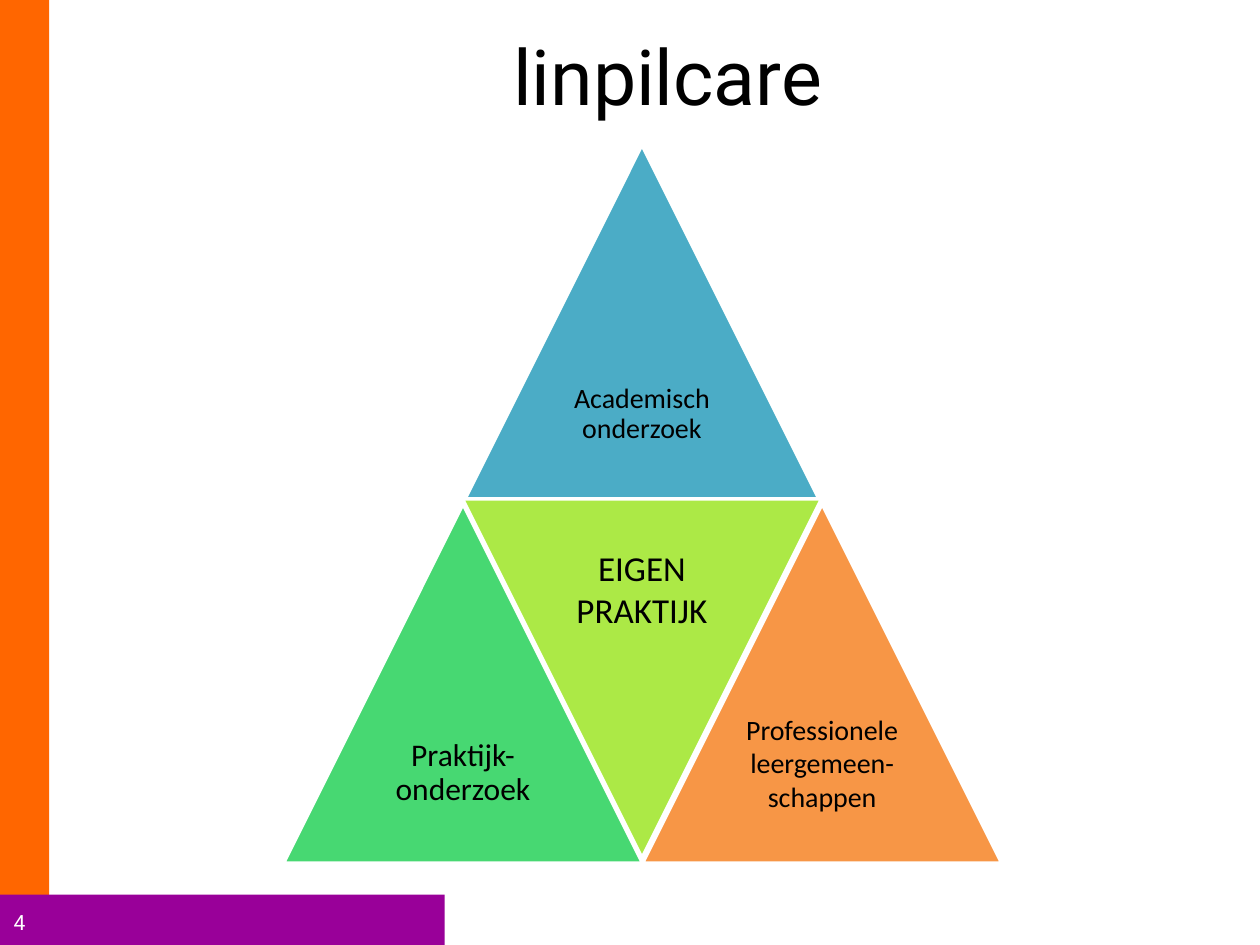
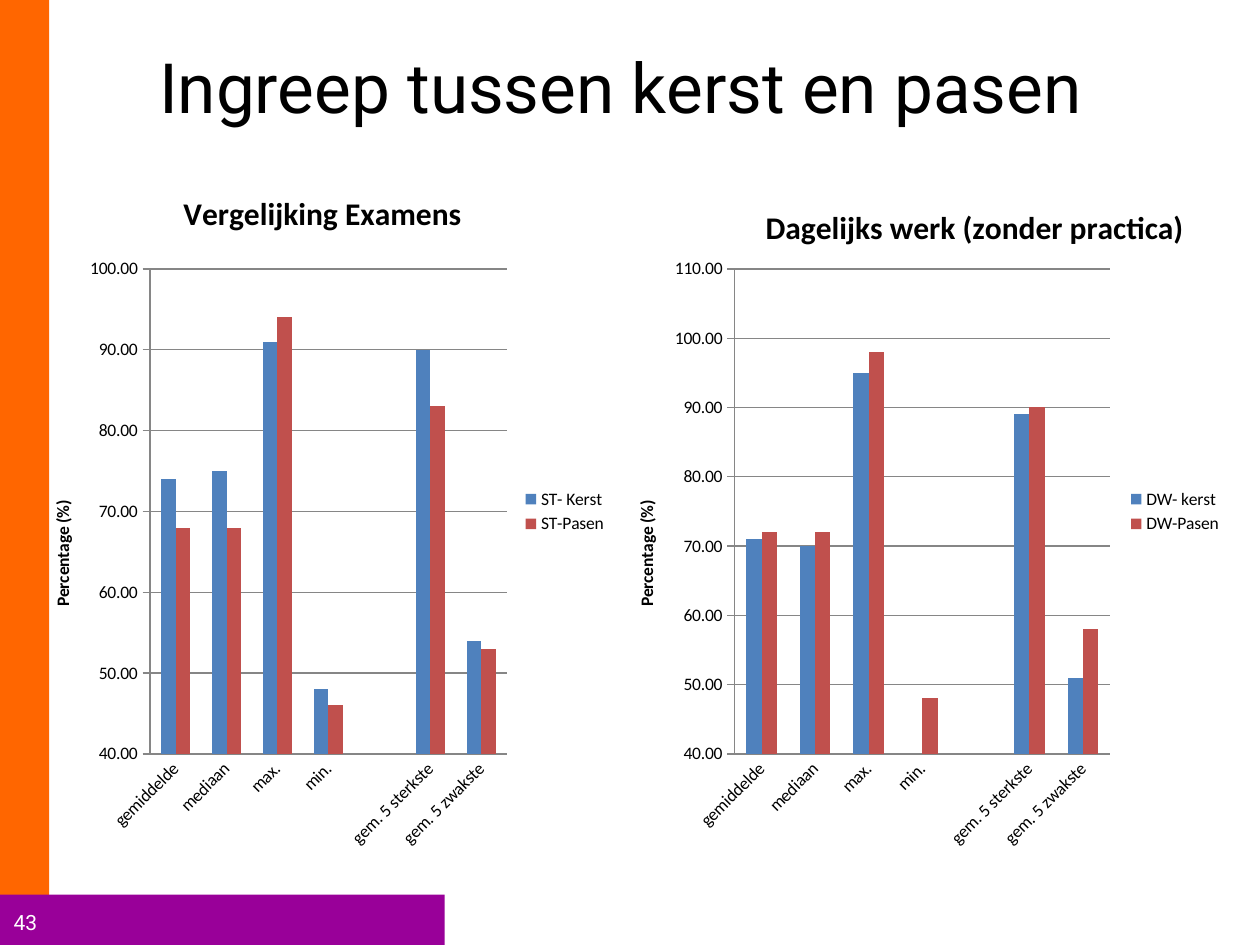
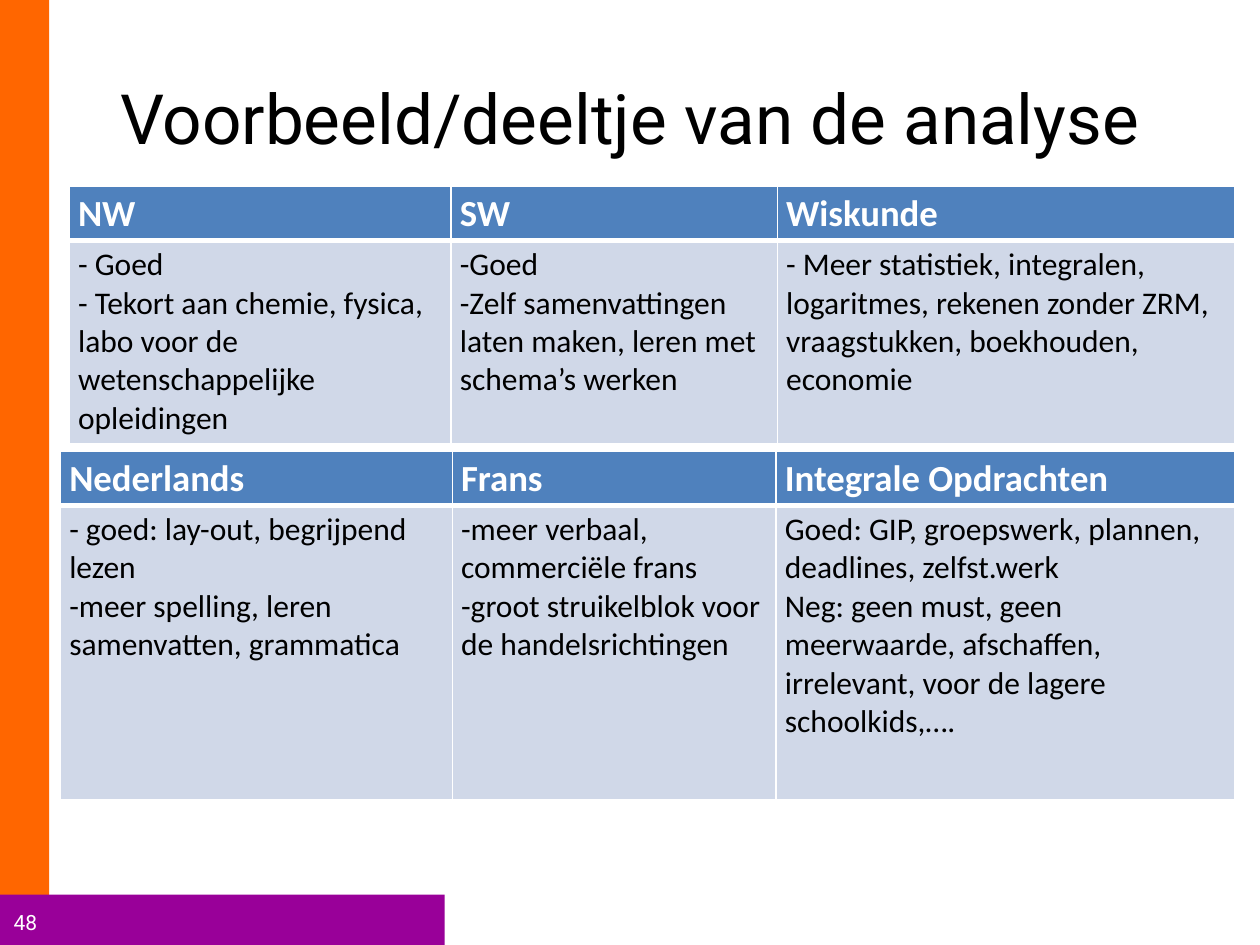
from lxml.etree import SubElement
from pptx import Presentation
from pptx.chart.data import CategoryChartData
from pptx.dml.color import RGBColor
from pptx.enum.chart import XL_CHART_TYPE as CHART, XL_LEGEND_POSITION as LEGEND, XL_TICK_MARK as TICK
from pptx.enum.shapes import MSO_SHAPE as SHAPE
from pptx.enum.text import MSO_ANCHOR as ANCHOR, PP_ALIGN as ALIGN
from pptx.oxml import parse_xml
from pptx.oxml.ns import nsdecls, qn
from pptx.util import Inches, Pt

ORANGE, PURPLE, WHITE, BLACK = "FF6600", "990099", "FFFFFF", "000000"
BLUE, RED, PALE, GREY = "4F81BD", "C0504D", "D0D8E8", "868686"
HEAD_FONT, BODY_FONT = "Roboto", "Calibri"


def rgb(value):
    """Turn a hex string into a colour."""
    return RGBColor.from_string(value)


def box(*lengths):
    """Turn left, top, width and height into lengths."""
    return [Inches(n) for n in lengths]


def style(font, size, color=BLACK, name=BODY_FONT, bold=False):
    """Format a font."""
    font.name, font.size, font.bold = name, Pt(size), bold
    font.color.rgb = rgb(color)


def place(parent, index, inner=False, **values):
    """Give a chart part a manual layout."""
    for old in parent.findall(qn("c:layout")):
        parent.remove(old)
    layout = parse_xml(f"<c:layout {nsdecls('c')}><c:manualLayout/></c:layout>")
    manual = layout[0]
    if inner:
        SubElement(manual, qn("c:layoutTarget")).set("val", "inner")
    for mode in ("xMode", "yMode"):
        SubElement(manual, qn(f"c:{mode}")).set("val", "edge")
    for key, value in values.items():
        SubElement(manual, qn(f"c:{key}")).set("val", str(value))
    parent.insert(index, layout)


def cell_borders(cell, top, bottom):
    """Draw white lines around a cell."""
    tcPr = cell._tc.get_or_add_tcPr()
    for side, width in (("L", 1), ("R", 1), ("T", top), ("B", bottom)):
        ln = SubElement(tcPr, qn(f"a:ln{side}"), w=str(Pt(width)))
        fill = SubElement(ln, qn("a:solidFill"))
        SubElement(fill, qn("a:srgbClr"), val=WHITE)


class Deck:
    """Hold the style and the current slide."""

    def __init__(self):
        """Start an empty presentation."""
        self.prs = Presentation()
        self.prs.slide_width, self.prs.slide_height = Inches(10), Inches(7.5)

    def new_slide(self, title, number, at, size=39.6):
        """Add a slide with its title, bands and number."""
        self.slide = self.prs.slides.add_slide(self.prs.slide_layouts[5])
        sp = self.slide.shapes.title
        sp.left, sp.top, sp.width, sp.height = box(*at)
        self.fill_text(sp.text_frame, title, size, name=HEAD_FONT, align=ALIGN.CENTER)
        self.shape(SHAPE.RECTANGLE, (0, 0, 0.39, 7.11), ORANGE)
        self.shape(SHAPE.RECTANGLE, (-0.01, 7.1, 3.54, 0.41), PURPLE)
        self.text(number, (0.01, 7.1, 0.69, 0.43), 12, color=WHITE, name=HEAD_FONT)

    def fill_text(self, tf, text, size, color=BLACK, name=BODY_FONT, bold=False,
                  align=ALIGN.LEFT, spacing=1.0):
        """Fill a text frame, one paragraph per line."""
        tf.word_wrap, tf.vertical_anchor = True, ANCHOR.MIDDLE
        for i, line in enumerate(text.split("\n")):
            p = tf.add_paragraph() if i else tf.paragraphs[0]
            p.alignment, p.line_spacing = align, spacing
            r = p.add_run()
            r.text = line
            style(r.font, size, color, name, bold)

    def text(self, text, at, size, inset=None, lift=0, **look):
        """Add a text box; lift raises its text from the bottom."""
        tf = self.slide.shapes.add_textbox(*box(*at)).text_frame
        if inset is not None:
            tf.margin_left = tf.margin_right = tf.margin_top = Inches(inset)
            tf.margin_bottom = Inches(inset + lift)
        self.fill_text(tf, text, size, **look)

    def shape(self, kind, at, fill, line=None):
        """Add a filled shape."""
        sp = self.slide.shapes.add_shape(kind, *box(*at))
        sp.shadow.inherit = False
        sp.fill.solid()
        sp.fill.fore_color.rgb = rgb(fill)
        if line:
            sp.line.color.rgb, sp.line.width = rgb(line), Pt(2)
        else:
            sp.line.fill.background()
        return sp

    def triangle(self, text, left, top, fill, size, down=False, spacing=1.0, lift=0):
        """Add a triangle with text in its wide half."""
        side = 2.85
        sp = self.shape(SHAPE.ISOSCELES_TRIANGLE, (left, top, side, side), fill, WHITE)
        sp.rotation = 180 if down else 0
        half = side / 2
        text_top = top if down else top + half
        self.text(text, (left + half / 2, text_top, half, half), size, inset=0.07,
                  lift=lift, align=ALIGN.CENTER, spacing=spacing)

    def chart(self, title, at, categories, series, top_value, plot_left, title_at=None):
        """Add a clustered column chart."""
        data = CategoryChartData()
        data.categories = categories
        for name, values in series.items():
            data.add_series(name, values)
        chart = self.slide.shapes.add_chart(CHART.COLUMN_CLUSTERED, *box(*at), data).chart
        style(chart.font, 10)
        self.chart_text(chart.chart_title, title, 18)
        if title_at:
            place(chart.chart_title.element, 1, x=title_at[0], y=title_at[1])
        chart.has_legend = True
        chart.legend.position, chart.legend.include_in_layout = LEGEND.RIGHT, False
        plot = chart.plots[0]
        plot.gap_width, plot.overlap, plot.vary_by_categories = 150, 0, False
        for ser, color in zip(plot.series, (BLUE, RED)):
            ser.format.fill.solid()
            ser.format.fill.fore_color.rgb = rgb(color)
            ser.invert_if_negative = False
        cat, val = chart.category_axis, chart.value_axis
        cat.major_tick_mark, val.major_tick_mark = TICK.NONE, TICK.OUTSIDE
        style(cat.tick_labels.font, 10)
        axis = cat.format.line and chart.element.find(".//" + qn("c:catAx"))
        axis.find(qn("c:txPr")).find(qn("a:bodyPr")).set("rot", "-2700000")
        val.minimum_scale, val.maximum_scale, val.major_unit = 40, top_value, 10
        val.tick_labels.number_format = "0.00"
        val.tick_labels.number_format_is_linked = False
        val.has_major_gridlines = True
        for part in (cat, val, val.major_gridlines):
            part.format.line.color.rgb = rgb(GREY)
        self.chart_text(val.axis_title, "Percentage (%)", 10)
        place(chart.element.find(".//" + qn("c:plotArea")), 0, inner=True,
              x=plot_left, y=0.15, w=0.6, h=0.7)

    def chart_text(self, part, text, size):
        """Set a chart title or an axis title."""
        r = part.text_frame.paragraphs[0].add_run()
        r.text = text
        style(r.font, size, bold=True)

    def table(self, left, top, widths, heights, rows):
        """Add a table with a header row."""
        frame = self.slide.shapes.add_table(
            len(rows), len(widths), *box(left, top, sum(widths), sum(heights)))
        table = frame.table
        table.horz_banding = False
        for column, width in zip(table.columns, widths):
            column.width = Inches(width)
        for i, (row, height) in enumerate(zip(rows, heights)):
            table.rows[i].height = Inches(height)
            look = dict(size=18) if i else dict(size=21, color=WHITE, bold=True)
            for j, text in enumerate(row):
                cell = table.cell(i, j)
                cell_borders(cell, *((3, 1) if i else (1, 3)))
                cell.fill.solid()
                cell.fill.fore_color.rgb = rgb(PALE if i else BLUE)
                cell.margin_left = cell.margin_right = Inches(0.07)
                cell.margin_top = cell.margin_bottom = Inches(0.04)
                self.fill_text(cell.text_frame, text, **look)
                cell.vertical_anchor = ANCHOR.TOP


def main():
    """Build the three slides."""
    deck = Deck()

    deck.new_slide("linpilcare", "4", (0.8, -0.03, 9, 1.25), 44)
    deck.triangle("Academisch onderzoek", 3.67, 1.15, "4BACC6", 16, spacing=0.9)
    deck.triangle("Praktijk-onderzoek", 2.25, 4, "47D872", 18, spacing=0.9)
    deck.triangle("EIGEN PRAKTIJK", 3.67, 3.96, "ACE946", 20, down=True)
    deck.triangle("Professionele leergemeen-schappen", 5.1, 4, "F79646", 16, lift=0.17)

    deck.new_slide("Ingreep tussen kerst en pasen", "43", (0.28, 0.36, 9.29, 0.65))
    measures = ["gemiddelde", "mediaan", "max.", "min.", "", "gem. 5 sterkste",
                "gem. 5 zwakste"]
    deck.chart("Vergelijking Examens", (0.2, 1.31, 4.72, 5.5), measures,
               {"ST- Kerst": (74, 75, 91, 48, None, 90, 54),
                "ST-Pasen": (68, 68, 94, 46, None, 83, 53)}, 100, 0.21)
    deck.chart("Dagelijks werk (zonder practica)", (4.84, 1.31, 4.96, 5.5), measures,
               {"DW- kerst": (71, 70, 95, 40, None, 89, 51),
                "DW-Pasen": (72, 72, 98, 48, None, 90, 58)}, 110, 0.2, (0.24, 0.05))

    deck.new_slide("Voorbeeld/deeltje van de analyse", "48", (0.5, 0.3, 9, 1.25))
    deck.table(0.55, 1.48, (3.03, 2.59, 3.63), (0.42, 1.61), [
        ("NW", "SW", "Wiskunde"),
        ("- Goed\n- Tekort aan chemie, fysica, labo voor de wetenschappelijke opleidingen",
         "-Goed\n-Zelf samenvattingen laten maken, leren met schema’s werken",
         "- Meer statistiek, integralen, logaritmes, rekenen zonder ZRM, "
         "vraagstukken, boekhouden, economie")])
    deck.table(0.48, 3.58, (3.11, 2.57, 3.64), (0.42, 2.34), [
        ("Nederlands", "Frans", "Integrale Opdrachten"),
        ("- goed: lay-out, begrijpend lezen\n-meer spelling, leren samenvatten, grammatica",
         "-meer verbaal, commerciële frans\n-groot struikelblok voor de handelsrichtingen",
         "Goed: GIP, groepswerk, plannen, deadlines, zelfst.werk\n"
         "Neg: geen must, geen meerwaarde, afschaffen, irrelevant, "
         "voor de lagere schoolkids,….")])

    deck.prs.save("out.pptx")


if __name__ == "__main__":
    main()
